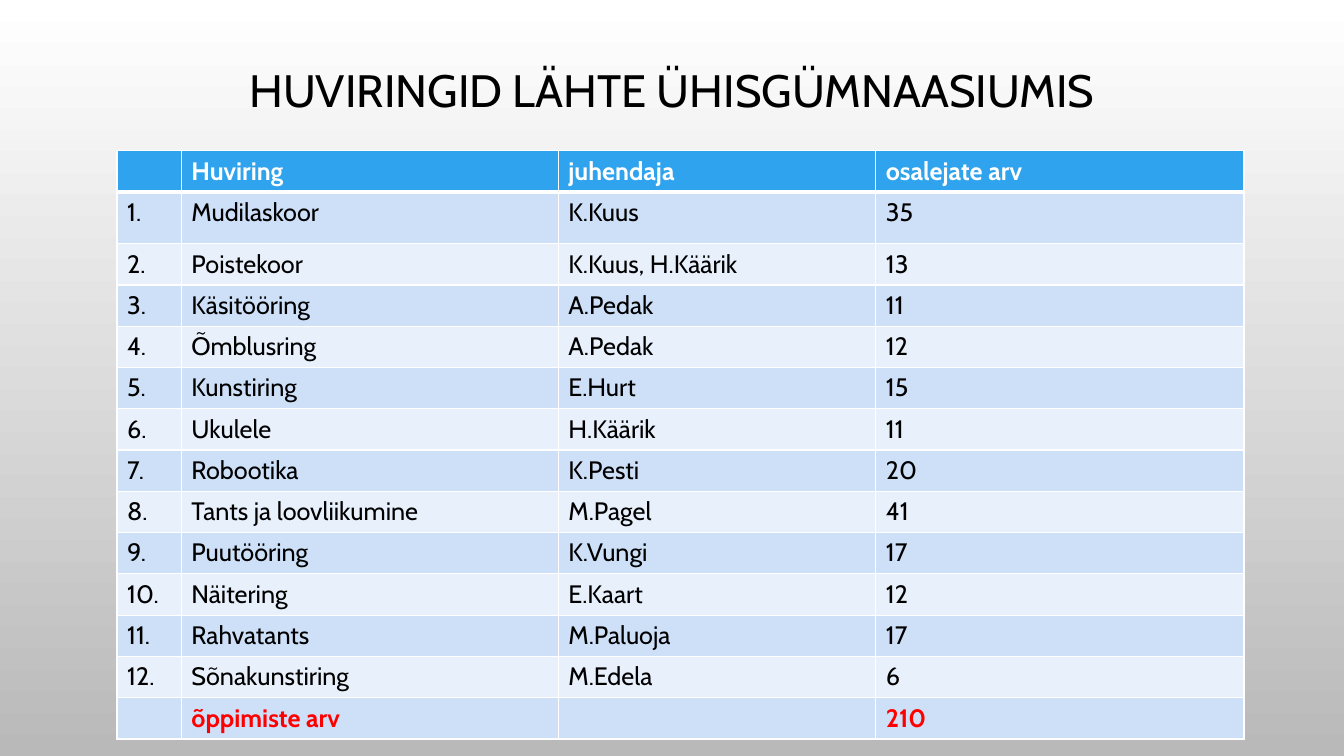
from dataclasses import dataclass

from lxml import etree
from pptx import Presentation
from pptx import util as u
from pptx.dml.color import RGBColor
from pptx.enum import text
from pptx.oxml.ns import qn

FONT = "Cabin"
COLORS = {
    "title": "000000",
    "header": "2FA3EE",
    "odd": "CDE0F8",
    "even": "E8F0FC",
    "body": "000000",
    "white": "FFFFFF",
    "total": "FF0000",
    "shade": "B9B9B9",
}
COLUMN_WIDTHS = (1.62, 9.5, 8.0, 9.28)
ROW_HEIGHT = 1.04
FIRST_CLUB_HEIGHT = 1.3


@dataclass(frozen=True)
class Club:
    name: str
    leader: str
    members: int


@dataclass(frozen=True)
class RowStyle:
    fill: str
    color: str
    bold: bool = False
    top: float = 1
    bottom: float = 1


CLUBS = [
    Club("Mudilaskoor", "K.Kuus", 35),
    Club("Poistekoor", "K.Kuus, H.Käärik", 13),
    Club("Käsitööring", "A.Pedak", 11),
    Club("Õmblusring", "A.Pedak", 12),
    Club("Kunstiring", "E.Hurt", 15),
    Club("Ukulele", "H.Käärik", 11),
    Club("Robootika", "K.Pesti", 20),
    Club("Tants ja loovliikumine", "M.Pagel", 41),
    Club("Puutööring", "K.Vungi", 17),
    Club("Näitering", "E.Kaart", 12),
    Club("Rahvatants", "M.Paluoja", 17),
    Club("Sõnakunstiring", "M.Edela", 6),
]


def rgb(name: str) -> RGBColor:
    return RGBColor.from_string(COLORS[name])


def paint_background(slide) -> None:
    fill = slide.background.fill
    fill.gradient()
    fill.gradient_angle = 270
    for stop, color, position in zip(fill.gradient_stops, ("white", "shade"), (0, 1)):
        stop.color.rgb = rgb(color)
        stop.position = position


def format_title(title) -> None:
    title.left, title.top = u.Cm(2.54), u.Cm(1.73)
    title.width, title.height = u.Cm(28.78), u.Cm(1.2)
    frame = title.text_frame
    frame.text = "HUVIRINGID LÄHTE ÜHISGÜMNAASIUMIS"
    frame.vertical_anchor = text.MSO_ANCHOR.MIDDLE
    frame.auto_size = text.MSO_AUTO_SIZE.NONE
    heading = frame.paragraphs[0]
    heading.alignment = text.PP_ALIGN.CENTER
    heading.line_spacing = 0.9
    font = heading.runs[0].font
    font.name, font.size = FONT, u.Pt(32.4)
    font.color.rgb = rgb("title")


def add_borders(cell, style: RowStyle) -> None:
    """Put white lines before the fill, in the order the schema asks for."""
    properties = cell._tc.get_or_add_tcPr()
    sides = {"lnL": 1, "lnR": 1, "lnT": style.top, "lnB": style.bottom}
    for index, (side, points) in enumerate(sides.items()):
        line = etree.Element(qn(f"a:{side}"), w=str(u.Pt(points)))
        solid = etree.SubElement(line, qn("a:solidFill"))
        etree.SubElement(solid, qn("a:srgbClr"), val=COLORS["white"])
        properties.insert(index, line)


def fill_row(cells, values: tuple[str, ...], style: RowStyle) -> None:
    for cell, value in zip(cells, values):
        cell.fill.solid()
        cell.fill.fore_color.rgb = rgb(style.fill)
        add_borders(cell, style)
        if not value:
            continue
        cell.text_frame.text = value
        font = cell.text_frame.paragraphs[0].runs[0].font
        font.name, font.size, font.bold = FONT, u.Pt(18), style.bold
        font.color.rgb = rgb(style.color)


def add_club_table(slide) -> None:
    row_count = len(CLUBS) + 2
    height = ROW_HEIGHT * (row_count - 1) + FIRST_CLUB_HEIGHT
    table = slide.shapes.add_table(
        row_count, len(COLUMN_WIDTHS), u.Cm(2.95), u.Cm(3.8),
        u.Cm(sum(COLUMN_WIDTHS)), u.Cm(height),
    ).table
    for column, width in zip(table.columns, COLUMN_WIDTHS):
        column.width = u.Cm(width)
    for row in table.rows:
        row.height = u.Cm(ROW_HEIGHT)
    table.rows[1].height = u.Cm(FIRST_CLUB_HEIGHT)

    fill_row(table.rows[0].cells, ("", "Huviring", "juhendaja", "osalejate arv"),
             RowStyle("header", "white", bold=True, bottom=3))
    for number, club in enumerate(CLUBS, start=1):
        style = RowStyle("odd" if number % 2 else "even", "body",
                         top=3 if number == 1 else 1)
        fill_row(table.rows[number].cells,
                 (f"{number}.", club.name, club.leader, str(club.members)), style)
    total = sum(club.members for club in CLUBS)
    fill_row(table.rows[row_count - 1].cells, ("", "õppimiste arv", "", str(total)),
             RowStyle("odd", "total", bold=True))


def main() -> None:
    presentation = Presentation()
    presentation.slide_width, presentation.slide_height = u.Cm(33.87), u.Cm(19.05)
    slide = presentation.slides.add_slide(presentation.slide_layouts[5])
    paint_background(slide)
    format_title(slide.shapes.title)
    add_club_table(slide)
    presentation.save("out.pptx")


if __name__ == "__main__":
    main()
